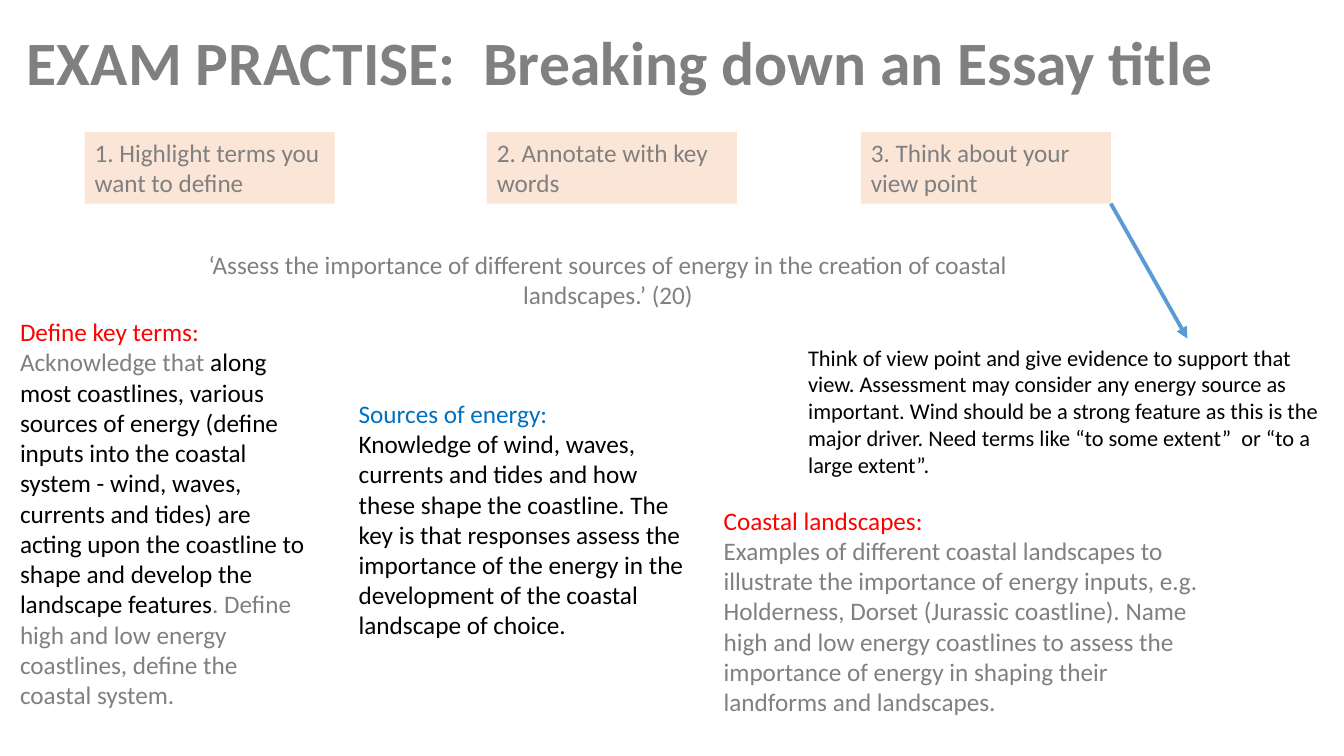
from dataclasses import dataclass

from lxml import etree
from pptx import Presentation
from pptx.dml.color import RGBColor
from pptx.enum.shapes import MSO_CONNECTOR, MSO_SHAPE
from pptx.enum.text import MSO_ANCHOR, MSO_AUTO_SIZE, PP_ALIGN
from pptx.oxml.ns import qn
from pptx.shapes.autoshape import Shape
from pptx.slide import Slide
from pptx.util import Pt

STRAIGHT = MSO_CONNECTOR.STRAIGHT
RECTANGLE = MSO_SHAPE.RECTANGLE
MIDDLE, TOP = MSO_ANCHOR.MIDDLE, MSO_ANCHOR.TOP
FIT_TEXT = MSO_AUTO_SIZE.SHAPE_TO_FIT_TEXT
LEFT, CENTER = PP_ALIGN.LEFT, PP_ALIGN.CENTER

FONT = "Calibri"
GREY, BLACK, RED, BLUE = "808080", "000000", "FF0000", "0070C0"
PEACH, ARROW_BLUE = "FBE5D6", "5B9BD5"

STEP_TOP, STEP_WIDTH, STEP_HEIGHT = 94.3, 178.6, 51.1


@dataclass
class Run:
    text: str
    color: str = GREY


@dataclass
class Step:
    left: float
    text: str


@dataclass
class Note:
    left: float
    top: float
    width: float
    height: float
    paragraphs: list[list[Run]]
    size: float = 18


STEPS = [
    Step(60.5, "1. Highlight terms you want to define"),
    Step(347.8, "2. Annotate with key words"),
    Step(614.9, "3. Think about your view point"),
]

NOTES = [
    Note(509.8, 357.1, 356.4, 159.8, [
        [Run("Coastal landscapes:", RED)],
        [Run("Examples of different coastal landscapes to illustrate the importance "
             "of energy inputs, e.g. Holderness, Dorset (Jurassic coastline). Name "
             "high and low energy coastlines to assess the importance of energy in "
             "shaping their landforms and landscapes.")],
    ]),
    Note(249.1, 280.8, 246.2, 181.4, [
        [Run("Sources of energy:", BLUE)],
        [Run("Knowledge of wind, waves, currents and tides and how these shape the "
             "coastline. The key is that responses assess the importance of the "
             "energy in the development of the coastal landscape of choice.", BLACK)],
    ]),
    Note(570.2, 241.9, 393.8, 104.4, [
        [Run("Think of view point and give evidence to support that view. Assessment "
             "may consider any energy source as important. Wind should be a strong "
             "feature as this is the major driver. Need terms like “to some extent”  "
             "or “to a large extent”.", BLACK)],
    ], size=16),
    Note(7.2, 222.5, 223.9, 290.9, [
        [Run("Define key terms:", RED)],
        [Run("Acknowledge that "),
         Run("along most coastlines, various sources of energy (define inputs into "
             "the coastal system - wind, waves, currents and tides) are acting upon "
             "the coastline to shape and develop the landscape features", BLACK),
         Run(". Define high and low energy coastlines, define the coastal system.")],
    ]),
]


def rgb(color: str) -> RGBColor:
    return RGBColor.from_string(color)


def write_text(shape: Shape, paragraphs: list[list[Run]], *, size: float = 18,
               bold: bool = False, align: PP_ALIGN = LEFT,
               anchor: MSO_ANCHOR = TOP, line_spacing: float = 1.0,
               auto_size: MSO_AUTO_SIZE = FIT_TEXT) -> None:
    frame = shape.text_frame
    frame.word_wrap = True
    frame.auto_size = auto_size
    frame.vertical_anchor = anchor
    for index, runs in enumerate(paragraphs):
        paragraph = frame.add_paragraph() if index else frame.paragraphs[0]
        paragraph.alignment = align
        paragraph.line_spacing = line_spacing
        for item in runs:
            run = paragraph.add_run()
            run.text = item.text
            run.font.name = FONT
            run.font.size = Pt(size)
            run.font.bold = bold
            run.font.color.rgb = rgb(item.color)


def add_text_box(slide: Slide, left: float, top: float,
                 width: float, height: float) -> Shape:
    return slide.shapes.add_textbox(Pt(left), Pt(top), Pt(width), Pt(height))


def add_step(slide: Slide, step: Step) -> None:
    shape = slide.shapes.add_shape(RECTANGLE, Pt(step.left), Pt(STEP_TOP),
                                   Pt(STEP_WIDTH), Pt(STEP_HEIGHT))
    shape.shadow.inherit = False
    shape.fill.solid()
    shape.fill.fore_color.rgb = rgb(PEACH)
    shape.line.fill.background()
    write_text(shape, [[Run(step.text)]])


def add_note(slide: Slide, note: Note) -> None:
    shape = add_text_box(slide, note.left, note.top, note.width, note.height)
    write_text(shape, note.paragraphs, size=note.size)


def add_arrow(slide: Slide, start: tuple[float, float],
              end: tuple[float, float]) -> None:
    connector = slide.shapes.add_connector(
        STRAIGHT, Pt(start[0]), Pt(start[1]), Pt(end[0]), Pt(end[1]))
    connector.line.color.rgb = rgb(ARROW_BLUE)
    connector.line.width = Pt(2.75)
    line = connector.line._get_or_add_ln()
    etree.SubElement(line, qn("a:tailEnd"), type="triangle")
    etree.SubElement(connector._element.spPr, qn("a:effectLst"))


def main() -> None:
    presentation = Presentation()
    presentation.slide_width = Pt(960)
    presentation.slide_height = Pt(540)
    slide = presentation.slides.add_slide(presentation.slide_layouts[6])

    # Title and essay question
    title = add_text_box(slide, 12.2, 17.3, 936, 58.3)
    write_text(title, [[Run("EXAM PRACTISE:  Breaking down an Essay title")]],
               size=44, bold=True, anchor=MIDDLE, line_spacing=0.9,
               auto_size=MSO_AUTO_SIZE.NONE)
    question = add_text_box(slide, 131.8, 174.2, 604.8, 51.1)
    write_text(question, [[Run("‘Assess the importance of different sources of energy "
                               "in the creation of coastal landscapes.’ (20)")]],
               align=CENTER)

    # Three steps along the top
    for step in STEPS:
        add_step(slide, step)

    # Notes, with an arrow from the last step's corner to its advice
    for note in NOTES:
        add_note(slide, note)
    add_arrow(slide, (STEPS[-1].left + STEP_WIDTH, STEP_TOP + STEP_HEIGHT),
              (848.2, 241.9))

    presentation.save("out.pptx")


if __name__ == "__main__":
    main()
